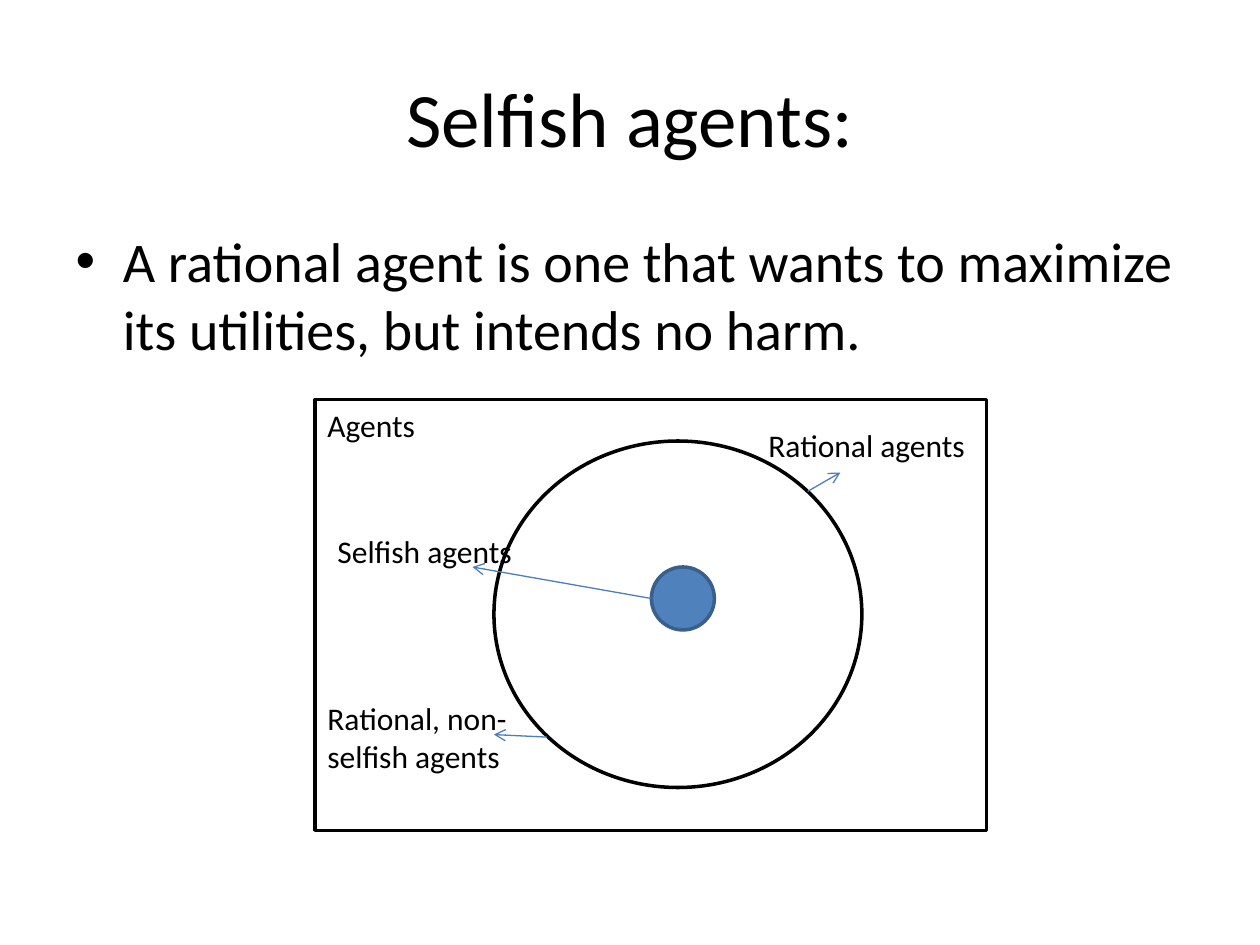
from dataclasses import dataclass

import pptx
import pptx.dml.color
import pptx.enum.shapes
import pptx.enum.text
import pptx.oxml
import pptx.oxml.ns
import pptx.util

Inches = pptx.util.Inches
Pt = pptx.util.Pt
RGBColor = pptx.dml.color.RGBColor
Kind = pptx.enum.shapes.MSO_SHAPE
Align = pptx.enum.text.PP_ALIGN
Anchor = pptx.enum.text.MSO_ANCHOR

BLACK = RGBColor(0x00, 0x00, 0x00)
WHITE = RGBColor(0xFF, 0xFF, 0xFF)
BLUE = RGBColor(0x4F, 0x81, 0xBD)
NAVY = RGBColor(0x3A, 0x5F, 0x8C)
ARROW = RGBColor(0x4B, 0x7E, 0xBC)
FONT = "Calibri"


@dataclass
class Region:
    kind: Kind
    box: tuple[float, float, float, float]
    fill: RGBColor
    edge: RGBColor


@dataclass
class Label:
    text: str
    box: tuple[float, float, float, float]


@dataclass
class Pointer:
    start: tuple[float, float]
    end: tuple[float, float]


REGIONS = [
    Region(Kind.RECTANGLE, (2.5, 3.17, 5.33, 3.42), WHITE, BLACK),
    Region(Kind.OVAL, (3.92, 3.5, 2.92, 2.75), WHITE, BLACK),
    Region(Kind.OVAL, (5.17, 4.5, 0.5, 0.5), BLUE, NAVY),
]
POINTERS = [
    Pointer((4.34, 5.85), (3.92, 5.83)),
    Pointer((5.17, 4.75), (3.75, 4.5)),
    Pointer((6.41, 3.9), (6.67, 3.75)),
]
LABELS = [
    Label("Agents", (2.5, 3.17, 1.08, 0.4)),
    Label("Rational, non-selfish agents", (2.5, 5.5, 1.67, 0.71)),
    Label("Selfish agents", (2.58, 4.17, 1.6, 0.71)),
    Label("Rational agents", (6, 3.33, 2, 0.4)),
]


def style(frame, size: int) -> None:
    for para in frame.paragraphs:
        for run in para.runs:
            run.font.name = FONT
            run.font.size = Pt(size)
            run.font.color.rgb = BLACK


def fill_holder(holder, text: str, box: tuple, size: int) -> None:
    holder.left, holder.top, holder.width, holder.height = map(Inches, box)
    holder.text_frame.text = text
    style(holder.text_frame, size)


def draw_region(slide, region: Region) -> None:
    shape = slide.shapes.add_shape(region.kind, *map(Inches, region.box))
    shape.shadow.inherit = False
    shape.fill.solid()
    shape.fill.fore_color.rgb = region.fill
    shape.line.color.rgb = region.edge
    shape.line.width = Pt(2)


def draw_pointer(slide, item: Pointer) -> None:
    line = slide.shapes.add_connector(
        pptx.enum.shapes.MSO_CONNECTOR.STRAIGHT,
        *map(Inches, item.start + item.end))
    line.line.color.rgb = ARROW
    line.line.width = Pt(0.75)
    # Open arrowhead, no shadow
    space = pptx.oxml.ns.nsdecls("a")
    line.line._get_or_add_ln().append(
        pptx.oxml.parse_xml(f'<a:tailEnd {space} type="arrow"/>'))
    line._element.spPr.append(pptx.oxml.parse_xml(f"<a:effectLst {space}/>"))


def draw_label(slide, label: Label) -> None:
    frame = slide.shapes.add_textbox(*map(Inches, label.box)).text_frame
    frame.word_wrap = True
    frame.text = label.text
    style(frame, 18)


def main() -> None:
    deck = pptx.Presentation()
    deck.slide_width, deck.slide_height = Inches(10), Inches(7.5)
    slide = deck.slides.add_slide(deck.slide_layouts[1])

    # Title and statement
    title, body = slide.placeholders
    fill_holder(title, "Selfish agents:", (0.5, 0.3, 9, 1.25), 44)
    title.text_frame.vertical_anchor = Anchor.MIDDLE
    title.text_frame.paragraphs[0].alignment = Align.CENTER
    fill_holder(body, "A rational agent is one that wants to maximize "
                "its utilities, but intends no harm.",
                (0.5, 1.75, 9, 4.95), 32)

    # Diagram of agent sets
    for region in REGIONS:
        draw_region(slide, region)
    for item in POINTERS:
        draw_pointer(slide, item)
    for label in LABELS:
        draw_label(slide, label)

    deck.save("out.pptx")


if __name__ == "__main__":
    main()
